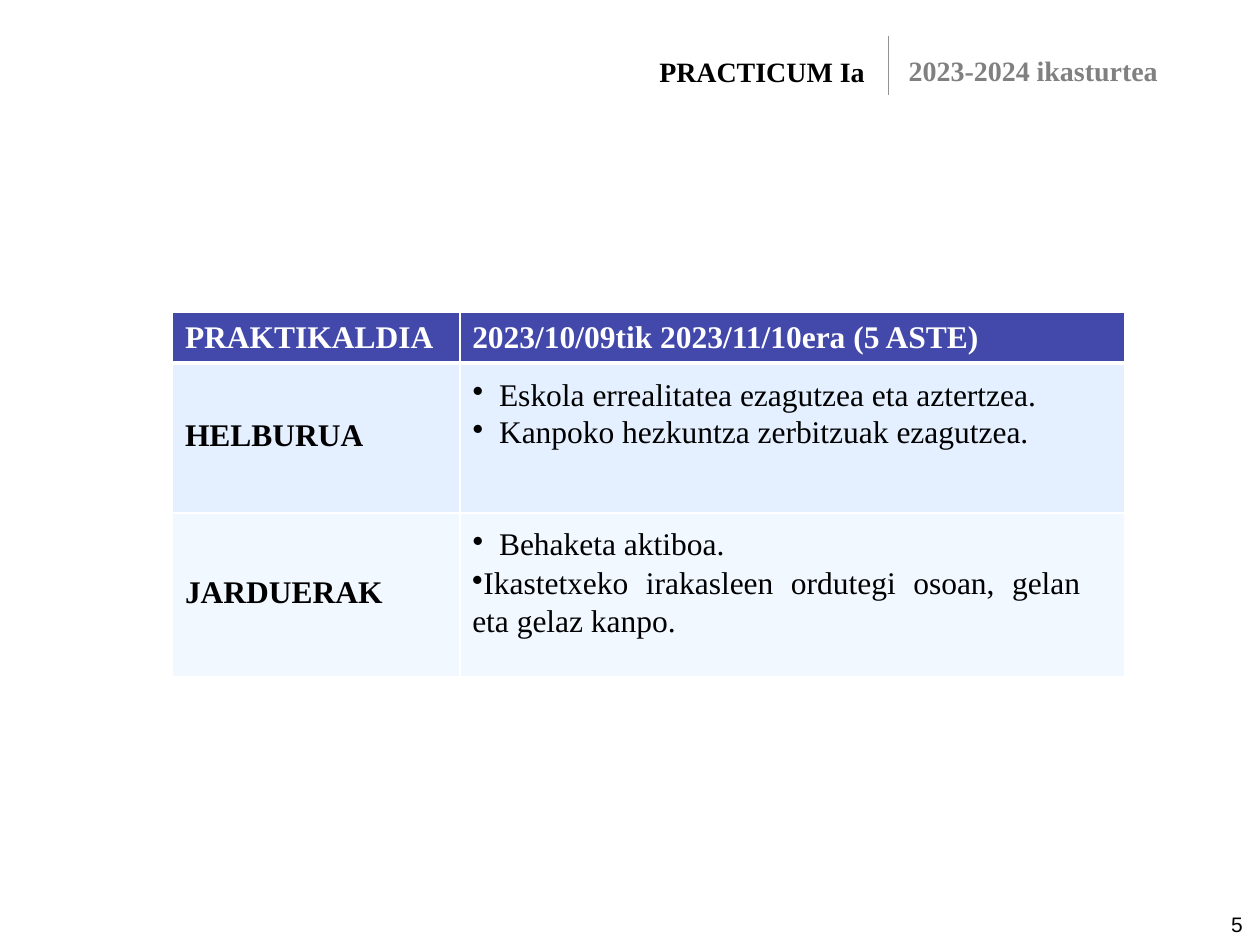
from typing import NamedTuple

from lxml import etree
from pptx import Presentation
from pptx import util as u
from pptx.dml import color
from pptx.enum import shapes, text
from pptx.oxml import ns

SERIF = "Times New Roman"


class Label(NamedTuple):
    words: str
    left: float
    top: float
    width: float
    height: float
    size: int
    tint: str
    face: str = SERIF
    bold: bool = True


class Item(NamedTuple):
    words: str
    left: float = 0.79
    hang: float = -0.53
    pitch: float = 21.3
    align: text.PP_ALIGN = text.PP_ALIGN.LEFT


class Row(NamedTuple):
    head: str
    items: list[Item]
    fill: str
    height: float


HEAD = Row("PRAKTIKALDIA", [Item("2023/10/09tik 2023/11/10era (5 ASTE)")], "4349AA", 1.02)
BODY = [
    Row("HELBURUA", [
        Item("Eskola errealitatea ezagutzea eta aztertzea."),
        Item("Kanpoko hezkuntza zerbitzuak ezagutzea."),
    ], "E4F0FF", 3.02),
    Row("JARDUERAK", [
        Item("Behaketa aktiboa."),
        Item("Ikastetxeko irakasleen ordutegi osoan, gelan eta gelaz kanpo.",
             0.25, 0, 22, text.PP_ALIGN.JUSTIFY),
    ], "F2F8FF", 3.3),
]
TITLE = Label("PRACTICUM Ia", 13.26, 1.02, 4.22, 0.74, 16, "000000")
YEAR = Label("2023-2024 ikasturtea", 18.29, 1.02, 5.11, 0.74, 16, "808080")
PAGE = Label("5", 24.79, 18.31, 0.3, 0.58, 12, "000000", "Arial", False)


def rgb(code: str) -> color.RGBColor:
    return color.RGBColor.from_string(code)


def style(para, size: int, tint: str, bold: bool, face: str = SERIF) -> None:
    for run in para.runs:
        run.font.name = face
        run.font.size = u.Pt(size)
        run.font.bold = bold
        run.font.color.rgb = rgb(tint)


def write(shape, label: Label) -> None:
    shape.left, shape.top = u.Cm(label.left), u.Cm(label.top)
    shape.width, shape.height = u.Cm(label.width), u.Cm(label.height)
    frame = shape.text_frame
    frame.text = label.words
    frame.word_wrap = False
    frame.auto_size = text.MSO_AUTO_SIZE.NONE
    frame.vertical_anchor = text.MSO_ANCHOR.TOP
    frame.margin_left = u.Cm(0.03)
    frame.margin_top = u.Cm(0.07)
    frame.margin_right = frame.margin_bottom = 0
    para = frame.paragraphs[0]
    para.alignment = text.PP_ALIGN.LEFT
    style(para, label.size, label.tint, label.bold, label.face)


def border(cell, top: int, base: int) -> None:
    props = cell._tc.get_or_add_tcPr()
    for side, width in (("L", 1), ("R", 1), ("T", top), ("B", base)):
        line = etree.SubElement(props, ns.qn(f"a:ln{side}"), w=str(u.Pt(width)))
        fill = etree.SubElement(line, ns.qn("a:solidFill"))
        etree.SubElement(fill, ns.qn("a:srgbClr"), val="FFFFFF")


def dress(cell, fill: str, top: int, base: int) -> None:
    border(cell, top, base)
    cell.fill.solid()
    cell.fill.fore_color.rgb = rgb(fill)
    cell.margin_left = u.Cm(0.25)
    cell.margin_top = cell.margin_right = cell.margin_bottom = 0
    cell.vertical_anchor = text.MSO_ANCHOR.MIDDLE


def mark(cell, words: str, tint: str) -> None:
    cell.text_frame.text = words
    style(cell.text_frame.paragraphs[0], 18, tint, True)


def fill_list(cell, items: list[Item]) -> None:
    cell.margin_left = 0
    cell.margin_top = u.Cm(0.25)
    cell.margin_right = u.Cm(0.89)
    cell.vertical_anchor = text.MSO_ANCHOR.TOP
    cell.text_frame.text = "\n".join(item.words for item in items)
    for para, item in zip(cell.text_frame.paragraphs, items):
        props = para._p.get_or_add_pPr()
        props.set("marL", str(u.Cm(item.left)))
        props.set("indent", str(u.Cm(item.hang)))
        etree.SubElement(props, ns.qn("a:buChar"), char="•")
        para.line_spacing = u.Pt(item.pitch)
        para.alignment = item.align
        style(para, 18, "000000", False)


def draw_table(slide) -> None:
    rows = [HEAD, *BODY]
    widths = (5.79, 13.41)
    height = sum(row.height for row in rows)
    table = slide.shapes.add_table(
        len(rows), len(widths), u.Cm(3.48), u.Cm(6.3),
        u.Cm(sum(widths)), u.Cm(height)).table
    for col, width in zip(table.columns, widths):
        col.width = u.Cm(width)
    for i, row in enumerate(rows):
        table.rows[i].height = u.Cm(row.height)
        left, right = table.cell(i, 0), table.cell(i, 1)
        for cell in (left, right):
            dress(cell, row.fill, 3 if i == 1 else 1, 3 if i == 0 else 1)
        mark(left, row.head, "FFFFFF" if i == 0 else "000000")
        if i == 0:
            mark(right, row.items[0].words, "FFFFFF")
        else:
            left.margin_bottom = u.Cm(0.1)
            fill_list(right, row.items)


def draw_rule(slide) -> None:
    rule = slide.shapes.add_connector(
        shapes.MSO_CONNECTOR.STRAIGHT, u.Cm(17.91), u.Cm(0.72), u.Cm(17.91), u.Cm(1.92))
    rule.line.color.rgb = rgb("929292")
    rule.line.width = u.Pt(0.75)
    etree.SubElement(rule._element.spPr, ns.qn("a:effectLst"))


def main() -> None:
    deck = Presentation()
    deck.slide_width, deck.slide_height = u.Cm(25.4), u.Cm(19.05)
    slide = deck.slides.add_slide(deck.slide_layouts[5])
    draw_rule(slide)
    draw_table(slide)
    write(slide.shapes.title, TITLE)
    for label in (YEAR, PAGE):
        write(slide.shapes.add_textbox(0, 0, 0, 0), label)
    deck.save("out.pptx")


if __name__ == "__main__":
    main()
